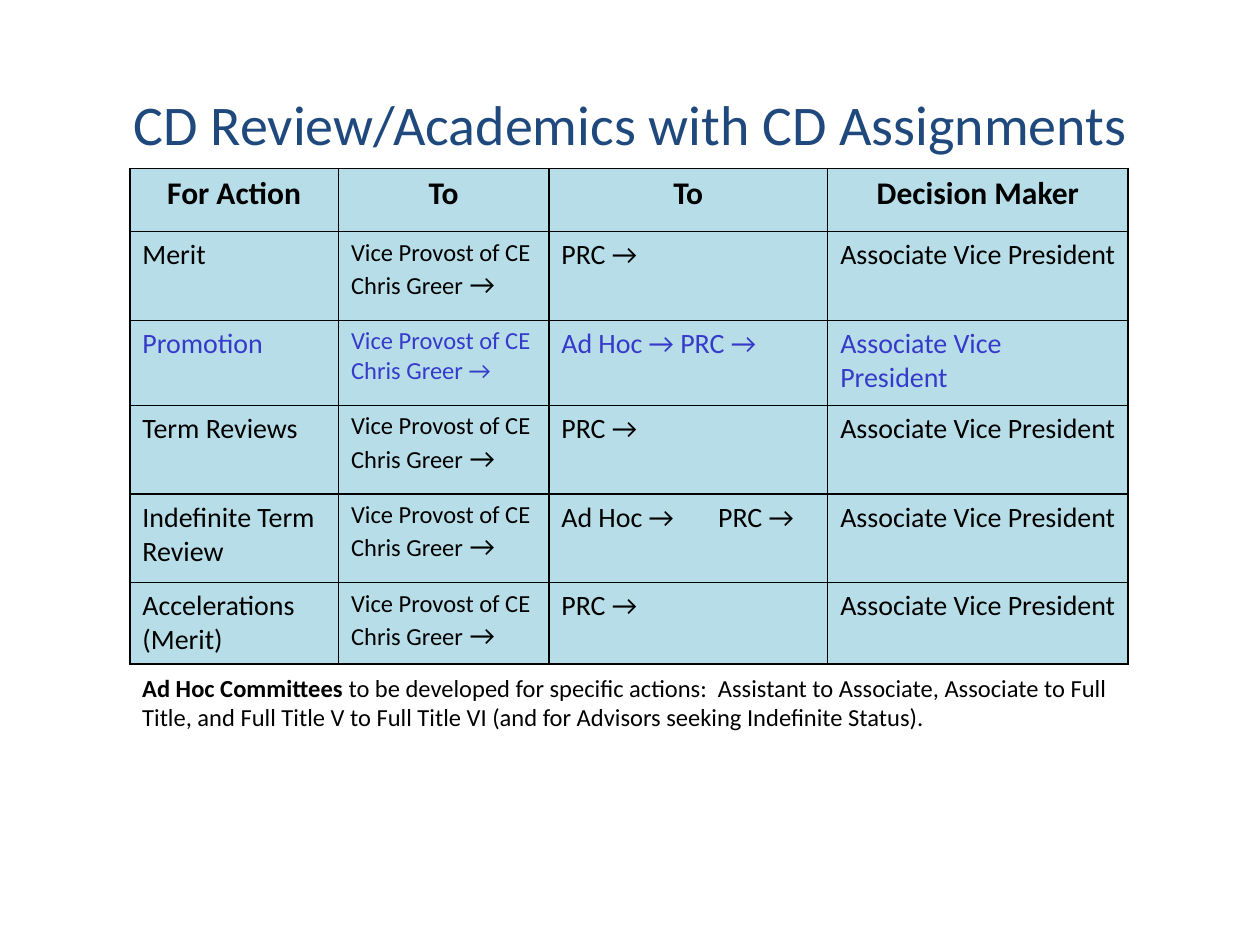
from lxml import etree
from pptx import Presentation
from pptx.dml.color import RGBColor
from pptx.enum.text import MSO_ANCHOR, PP_ALIGN
from pptx.oxml.ns import qn
from pptx.util import Pt

CENTER, LEFT = PP_ALIGN.CENTER, PP_ALIGN.LEFT
MIDDLE, TOP = MSO_ANCHOR.MIDDLE, MSO_ANCHOR.TOP
FONT = "Calibri"
COLORS = {"title": "1F497D", "text": "000000", "accent": "363ACA",
          "cell": "B7DEE8", "border": "000000"}


def write_paragraph(paragraph, text, size, color="text", bold=False, align=LEFT):
    paragraph.text = text
    paragraph.alignment = align
    paragraph.font.name = FONT
    paragraph.font.size = Pt(size)
    paragraph.font.bold = bold
    paragraph.font.color.rgb = RGBColor.from_string(COLORS[color])


def style_cell(cell):
    """Give the cell four thin borders and the table's fill."""
    properties = cell._tc.get_or_add_tcPr()
    for side in ("a:lnL", "a:lnR", "a:lnT", "a:lnB"):
        line = etree.SubElement(properties, qn(side), w=str(Pt(1)))
        fill = etree.SubElement(line, qn("a:solidFill"))
        etree.SubElement(fill, qn("a:srgbClr"), val=COLORS["border"])
    cell.fill.solid()
    cell.fill.fore_color.rgb = RGBColor.from_string(COLORS["cell"])


deck = Presentation()
deck.slide_width, deck.slide_height = Pt(720), Pt(540)
page = deck.slides.add_slide(deck.slide_layouts[6])

# Title
title = page.shapes.add_textbox(Pt(57.4), Pt(27.4), Pt(606), Pt(86.4)).text_frame
title.word_wrap = True
title.vertical_anchor = MIDDLE
write_paragraph(title.paragraphs[0], "CD Review/Academics with CD Assignments",
                32, "title", align=CENTER)

# Table of actions and reviewers
headers = ["For Action", "To", "To", "Decision Maker"]
actions = [
    ("Merit", "PRC →"),
    ("Promotion", "Ad Hoc → PRC →"),
    ("Term Reviews", "PRC →"),
    ("Indefinite Term Review", "Ad Hoc →\tPRC →"),
    ("Accelerations (Merit)", "PRC →"),
]
column_widths = [119.2, 120.2, 159.4, 171.6]
row_heights = [36.2, 50.6, 48.6, 50.8, 50.6, 46.4]

table = page.shapes.add_table(len(row_heights), len(column_widths), Pt(74.2), Pt(96.2),
                              Pt(sum(column_widths)), Pt(sum(row_heights))).table
for column, width in zip(table.columns, column_widths):
    column.width = Pt(width)
for row, height in zip(table.rows, row_heights):
    row.height = Pt(height)
for cell in table.iter_cells():
    style_cell(cell)

for column, header in enumerate(headers):
    write_paragraph(table.cell(0, column).text_frame.paragraphs[0], header, 18,
                    bold=True, align=CENTER)

for row, (action, committee) in enumerate(actions, start=1):
    promotion = action == "Promotion"
    color = "accent" if promotion else "text"
    if promotion:
        reviewer = ["Vice Provost of CE", "Chris Greer →"]
        decision = ["Associate Vice", "President"]
    else:
        reviewer = ["Vice Provost of CE Chris Greer"]
        decision = ["Associate Vice President"]
    columns = [([action], 16), (reviewer, 14), ([committee], 16), (decision, 16)]
    for column, (lines, size) in enumerate(columns):
        frame = table.cell(row, column).text_frame
        for index, line in enumerate(lines):
            paragraph = frame.add_paragraph() if index else frame.paragraphs[0]
            if "\t" in line:
                stops = etree.SubElement(paragraph._p.get_or_add_pPr(), qn("a:tabLst"))
                etree.SubElement(stops, qn("a:tab"), pos=str(Pt(89.6)), algn="l")
            write_paragraph(paragraph, line, size, color)
    if not promotion:
        arrow = table.cell(row, 1).text_frame.paragraphs[0].add_run()
        arrow.text = " →"
        arrow.font.size = Pt(16)

# Note below the table
note = page.shapes.add_textbox(Pt(74.2), Pt(381), Pt(570.4), Pt(42)).text_frame
note.word_wrap = True
note.vertical_anchor = TOP
paragraph = note.paragraphs[0]
write_paragraph(paragraph, "Ad Hoc Committees ", 14)
paragraph.runs[0].font.bold = True
paragraph.add_run().text = (
    "to be developed for specific actions:  Assistant to Associate, Associate to Full "
    "Title, and Full Title V to Full Title VI (and for Advisors seeking Indefinite Status).")

deck.save("out.pptx")
